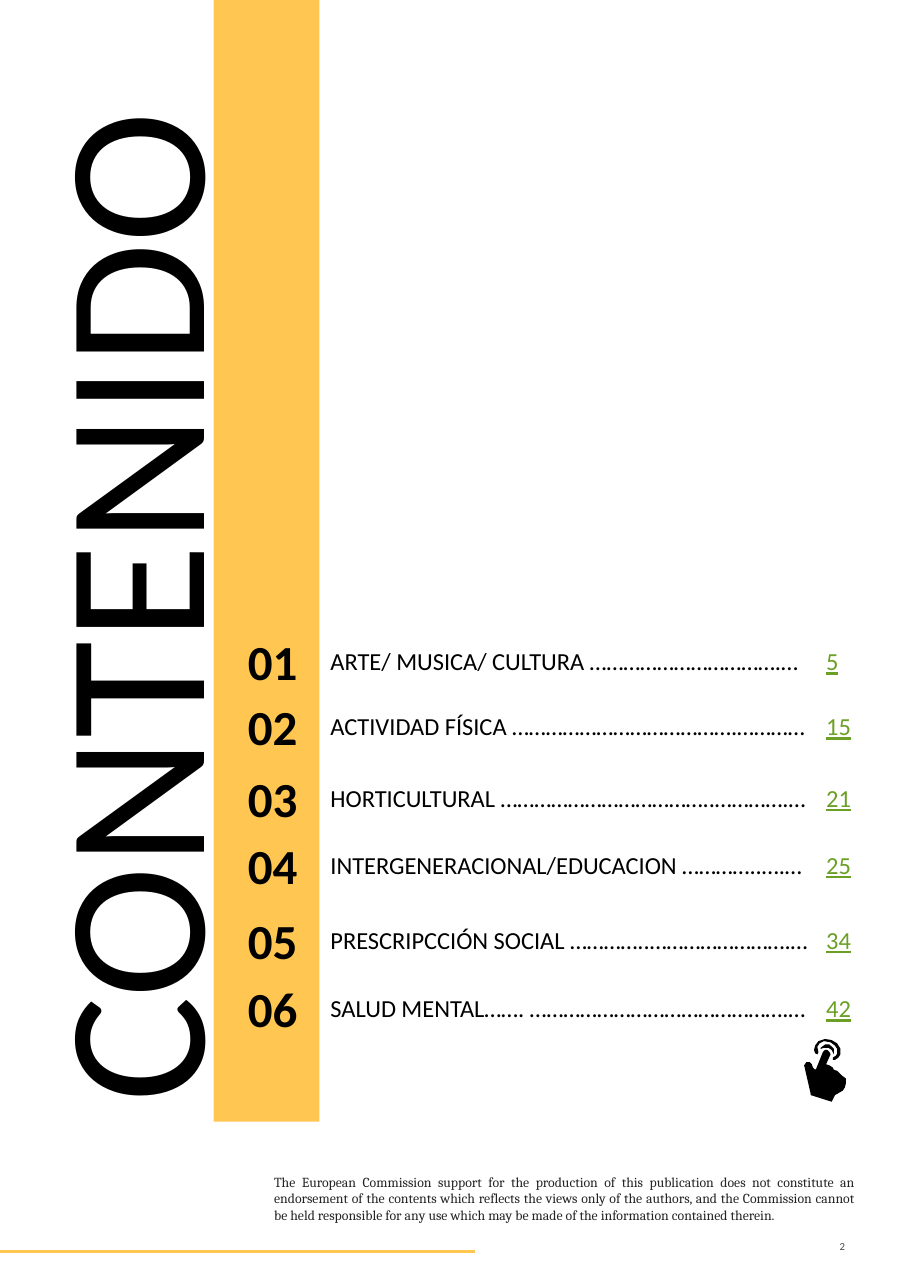
from lxml import etree
from pptx import Presentation
from pptx.dml.color import RGBColor
from pptx.enum import shapes, text
from pptx.oxml import ns
from pptx.util import Inches, Pt

COLORS = {
    "band": "FFC652",
    "ink": "000000",
    "link": "6B9F25",
    "note": "242424",
    "folio": "4B4B4B",
}
LINE_HEIGHT = 1.2  # Calibri line height as a share of its size

# Centre of the row, topic with its leader, page
CONTENTS = [
    (6.00, "ARTE/ MUSICA/ CULTURA …………………………….…", "5"),
    (6.59, "ACTIVIDAD FÍSICA ………………………………….…………", "15"),
    (7.24, "HORTICULTURAL ………………………………..………….…", "21"),
    (7.85, "INTERGENERACIONAL/EDUCACION …………..….…", "25"),
    (8.53, "PRESCRIPCCIÓN SOCIAL …………..…………………….…", "34"),
    (9.15, "SALUD MENTAL……. ……………………………………….…", "42"),
]
DISCLAIMER = (
    "The European Commission support for the production of this publication "
    "does not constitute an endorsement of the contents which reflects the views "
    "only of the authors, and the Commission cannot be held responsible for any "
    "use which may be made of the information contained therein."
)

OUTER_WAVE = [
    (7.42, 9.57), (7.43, 9.55), (7.42, 9.50), (7.44, 9.47), (7.48, 9.45),
    (7.54, 9.46), (7.58, 9.49), (7.60, 9.52), (7.60, 9.56), (7.59, 9.58),
    (7.56, 9.60), (7.56, 9.62), (7.58, 9.62), (7.61, 9.60), (7.63, 9.57),
    (7.63, 9.52), (7.60, 9.47), (7.55, 9.44), (7.49, 9.43), (7.43, 9.45),
    (7.40, 9.49), (7.39, 9.53), (7.40, 9.56),
]
INNER_WAVE = [
    (7.52, 9.51), (7.55, 9.53), (7.57, 9.57), (7.57, 9.55), (7.57, 9.52),
    (7.53, 9.48), (7.49, 9.48), (7.45, 9.51), (7.45, 9.52), (7.48, 9.51),
]
HAND = [
    (7.68, 9.83), (7.68, 9.79), (7.64, 9.76), (7.63, 9.75), (7.60, 9.72),
    (7.57, 9.71), (7.56, 9.69), (7.53, 9.67), (7.50, 9.66), (7.54, 9.57),
    (7.53, 9.55), (7.51, 9.53), (7.49, 9.53), (7.47, 9.55), (7.41, 9.70),
    (7.40, 9.71), (7.38, 9.69), (7.37, 9.66), (7.35, 9.64), (7.32, 9.64),
    (7.30, 9.67), (7.36, 9.93), (7.36, 9.94), (7.55, 10.00), (7.58, 9.94),
    (7.65, 9.90), (7.67, 9.87),
]


def color(name):
    return RGBColor.from_string(COLORS[name])


def style(span, size, ink="ink", font="Calibri", bold=False, underline=False):
    span.font.name = font
    span.font.size = Pt(size)
    span.font.color.rgb = color(ink)
    span.font.bold = bold
    span.font.underline = underline


def place(box, left, top, width, height):
    box.left, box.top = Inches(left), Inches(top)
    box.width, box.height = Inches(width), Inches(height)


def set_frame(box, anchor, margins):
    """Fix the frame; margins run left, top, right, bottom."""
    frame = box.text_frame
    frame.auto_size = text.MSO_AUTO_SIZE.NONE
    frame.word_wrap = True
    frame.vertical_anchor = anchor
    (frame.margin_left, frame.margin_top,
     frame.margin_right, frame.margin_bottom) = map(Inches, margins)
    return frame


def clear_bullet(para, tab=None):
    """Remove bullet and indent, and set an optional left tab stop."""
    props = para._p.get_or_add_pPr()
    props.set("marL", "0")
    props.set("indent", "0")
    etree.SubElement(props, ns.qn("a:buNone"))
    if tab:
        stops = etree.SubElement(props, ns.qn("a:tabLst"))
        etree.SubElement(stops, ns.qn("a:tab"), pos=str(Inches(tab)), algn="l")


def fill_rows(box, lines, size, left, width, align, tab=None):
    """Set one paragraph per contents row, each centred on its row."""
    centers = [row[0] for row in CONTENTS]
    line = size * LINE_HEIGHT / 72
    place(box, left, centers[0] - line / 2, width, centers[-1] - centers[0] + line)
    frame = set_frame(box, text.MSO_ANCHOR.TOP, (0.1, 0, 0.1, 0))
    frame.text = "\n".join(lines)
    for i, para in enumerate(frame.paragraphs):
        clear_bullet(para, tab)
        para.alignment = align
        gap = centers[i] - centers[i - 1] - line if i else 0
        para.space_before = Pt(round(gap * 72, 1))
        para.space_after = Pt(0)
    return frame.paragraphs


def add_band(page):
    band = page.shapes.add_shape(shapes.MSO_SHAPE.RECTANGLE, Inches(1.94), 0,
                                 Inches(0.96), Inches(10.18))
    band.shadow.inherit = False
    band.fill.solid()
    band.fill.fore_color.rgb = color("band")
    band.line.fill.background()
    band.element.getparent().insert(2, band.element)  # behind the text


def add_rule(page):
    rule = page.shapes.add_connector(shapes.MSO_CONNECTOR.STRAIGHT, 0, Inches(11.36),
                                     Inches(4.31), Inches(11.36))
    rule.line.color.rgb = color("band")
    rule.line.width = Pt(1.5)
    etree.SubElement(rule.element.spPr, ns.qn("a:effectLst"))


def add_outline(page, points):
    corners = [(Inches(x), Inches(y)) for x, y in points]
    builder = page.shapes.build_freeform(*corners[0])
    builder.add_line_segments(corners[1:], close=True)
    outline = builder.convert_to_shape()
    outline.shadow.inherit = False
    outline.fill.solid()
    outline.fill.fore_color.rgb = color("ink")
    outline.line.fill.background()


def add_text(page, words, area, align, anchor, **look):
    box = page.shapes.add_textbox(*map(Inches, area))
    frame = set_frame(box, anchor, (0.1, 0.05, 0.1, 0.05))
    frame.text = words
    para = frame.paragraphs[0]
    para.alignment = align
    style(para.runs[0], **look)


def set_title(title):
    place(title, -2.95, 3.67, 9.39, 3.48)
    title.rotation = 270
    frame = set_frame(title, text.MSO_ANCHOR.TOP, (0.1, 0.05, 0.1, 0.05))
    frame.text = "CONTENIDO"
    frame.paragraphs[0].alignment = text.PP_ALIGN.LEFT
    style(frame.paragraphs[0].runs[0], 130)


def set_contents(numbers, topics):
    labels = [f"{i:02}" for i in range(1, len(CONTENTS) + 1)]
    for para in fill_rows(numbers, labels, 32, 2.12, 0.71, text.PP_ALIGN.CENTER):
        style(para.runs[0], 32, bold=True)

    leaders = [topic + "\t" for _, topic, _ in CONTENTS]
    paras = fill_rows(topics, leaders, 16, 2.9, 4.96, text.PP_ALIGN.LEFT, tab=4.53)
    for para, (_, _, number) in zip(paras, CONTENTS):
        style(para.runs[0], 16)
        span = para.add_run()
        span.text = number
        style(span, 16, "link", underline=True)


def main():
    deck = Presentation()
    deck.slide_width, deck.slide_height = Inches(8.27), Inches(11.69)
    page = deck.slides.add_slide(deck.slide_layouts.get_by_name("Two Content"))
    title, numbers, topics = page.placeholders

    add_band(page)
    add_rule(page)
    set_title(title)
    set_contents(numbers, topics)
    for points in (OUTER_WAVE, INNER_WAVE, HAND):
        add_outline(page, points)
    add_text(page, "2", (6.69, 11.18, 1.08, 0.26), text.PP_ALIGN.RIGHT,
             text.MSO_ANCHOR.MIDDLE, size=7, ink="folio")
    add_text(page, DISCLAIMER, (2.39, 10.6, 5.46, 0.56), text.PP_ALIGN.JUSTIFY,
             text.MSO_ANCHOR.TOP, size=9, ink="note", font="Cambria")
    deck.save("out.pptx")


if __name__ == "__main__":
    main()
